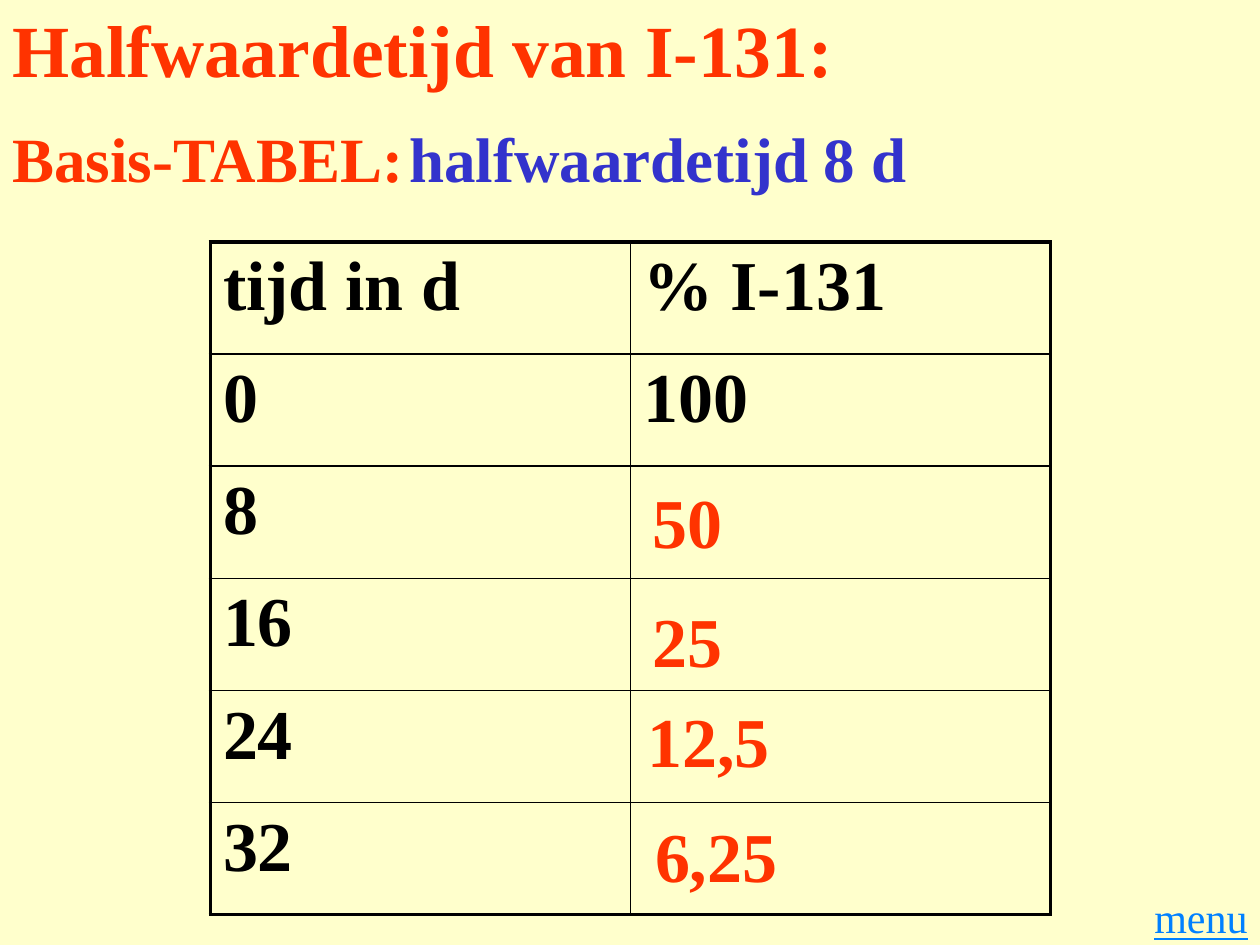
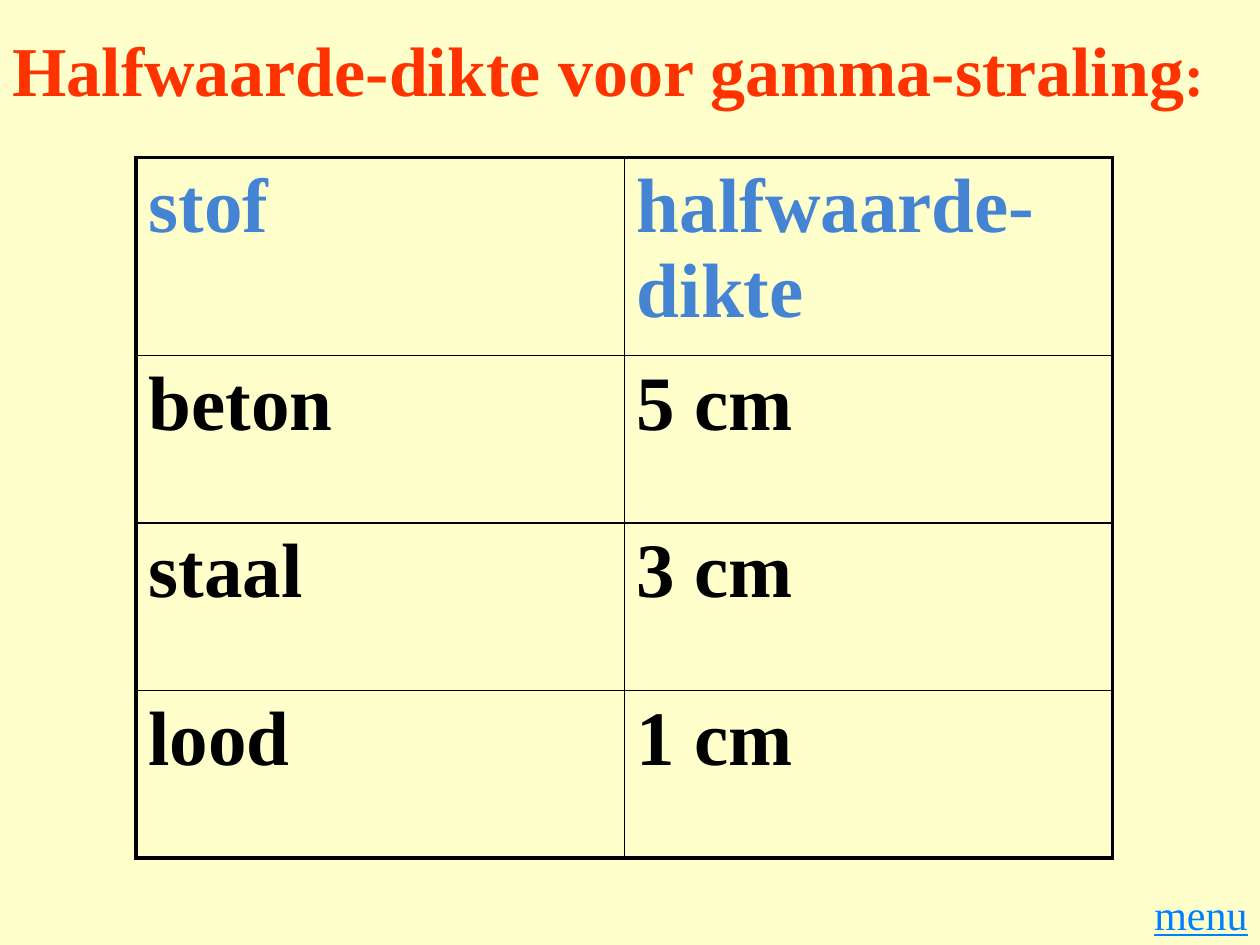
from lxml import etree
from pptx import Presentation
from pptx.dml.color import RGBColor
from pptx.enum.text import MSO_ANCHOR, PP_ALIGN
from pptx.oxml.ns import qn
from pptx.util import Inches, Pt

TOP, MIDDLE = MSO_ANCHOR.TOP, MSO_ANCHOR.MIDDLE
LEFT, RIGHT = PP_ALIGN.LEFT, PP_ALIGN.RIGHT

COLORS = {
    "background": "FFFFCC",
    "title": "FF3300",
    "value": "3333CC",
    "header": "4584D3",
    "body": "000000",
    "menu": "0080FF",
}
FONT = "Times New Roman"
OUTER_LINE, INNER_LINE = 2.25, 1


def write(frame, runs, anchor=TOP, align=LEFT, before=0):
    """Fill a text frame with runs of (text, size, colour name, other format)."""
    frame.word_wrap = True
    frame.vertical_anchor = anchor
    paragraph = frame.paragraphs[0]
    paragraph.alignment = align
    paragraph.space_before = Pt(before)
    for text, size, color, extra in runs:
        run = paragraph.add_run()
        run.text = text
        run.font.color.rgb = RGBColor.from_string(COLORS[color])
        for name, value in {"name": FONT, "size": Pt(size), **extra}.items():
            setattr(run.font, name, value)


def add_grid(slide, box, row_heights, rows, size, header_color):
    """Add a two-column table with a thick frame and thin inner lines."""
    table = slide.shapes.add_table(len(rows), 2, *map(Inches, box)).table
    table.first_row = table.horz_banding = False
    for row, height in zip(table.rows, row_heights):
        row.height = Inches(height)
    for r, texts in enumerate(rows):
        for c, text in enumerate(texts):
            cell = table.cell(r, c)
            if text:
                color = "body" if r else header_color
                write(cell.text_frame, [(text, size, color, {"bold": True})])
            # Borders come before the fill in the cell properties
            properties = cell._tc.get_or_add_tcPr()
            outer_sides = {"lnL": c == 0, "lnR": c == 1,
                           "lnT": r == 0, "lnB": r == len(rows) - 1}
            for side, is_outer in outer_sides.items():
                width = Pt(OUTER_LINE if is_outer else INNER_LINE)
                line = etree.SubElement(properties, qn("a:" + side), w=str(width))
                fill = etree.SubElement(line, qn("a:solidFill"))
                etree.SubElement(fill, qn("a:srgbClr"), val=COLORS["body"])
            cell.fill.background()


prs = Presentation()
prs.slide_width, prs.slide_height = Inches(10), Inches(7.5)
bold = {"bold": True}

# Shared parts: background, title and menu label
titles = [
    ((0, -0.08, 9.25, 0.92), [("Halfwaardetijd van I-131:", 42, "title", bold)], 7.03),
    ((0, 0.08, 10, 0.92), [("Halfwaarde-dikte voor gamma-straling", 40, "title", bold),
                           (":", 34, "title", bold)], 7),
]
slides = []
for title_box, title_runs, menu_top in titles:
    slide = prs.slides.add_slide(prs.slide_layouts[6])
    slide.background.fill.solid()
    slide.background.fill.fore_color.rgb = RGBColor.from_string(COLORS["background"])
    title = slide.shapes.add_textbox(*map(Inches, title_box))
    write(title.text_frame, title_runs, anchor=MIDDLE)
    menu = slide.shapes.add_textbox(*map(Inches, (8.98, menu_top, 1.02, 0.5)))
    write(menu.text_frame, [("menu", 24, "menu", {"underline": True})],
          align=RIGHT, before=3)
    slides.append(slide)
half_life, half_thickness = slides

# Slide 1: half-life from the reference tables
for text, color, box in [
    ("Basis-TABEL:", "title", (0, 0.83, 3.35, 0.83)),
    ("halfwaardetijd 8 d", "value", (3.15, 0.93, 4.42, 0.63)),
]:
    label = half_life.shapes.add_textbox(*map(Inches, box))
    write(label.text_frame, [(text, 36, color, bold)], anchor=MIDDLE)

# Slide 1: decay table with an empty column for the answers
decay_rows = [("tijd in d", "% I-131"), ("0", "100"),
              ("8", ""), ("16", ""), ("24", ""), ("32", "")]
add_grid(half_life, (1.67, 1.92, 6.67, 5.33), [0.89] * 6, decay_rows, 40, "body")

# Slide 1: answers laid over the empty cells
for text, left, top in [("50", 5.08, 3.75), ("25", 5.08, 4.69),
                        ("12,5", 5.04, 5.49), ("6,25", 5.1, 6.4)]:
    answer = half_life.shapes.add_textbox(*map(Inches, (left, top, 1.25, 0.77)))
    write(answer.text_frame, [(text, 40, "title", bold)], before=4)

# Slide 2: half-value thickness per material
thickness_rows = [("stof", "halfwaarde-dikte"), ("beton", "5 cm"),
                  ("staal", "3 cm"), ("lood", "1 cm")]
add_grid(half_thickness, (1.08, 1.25, 7.75, 5.57), [1.57] + [1.33] * 3,
         thickness_rows, 44, "header")

prs.save("out.pptx")
